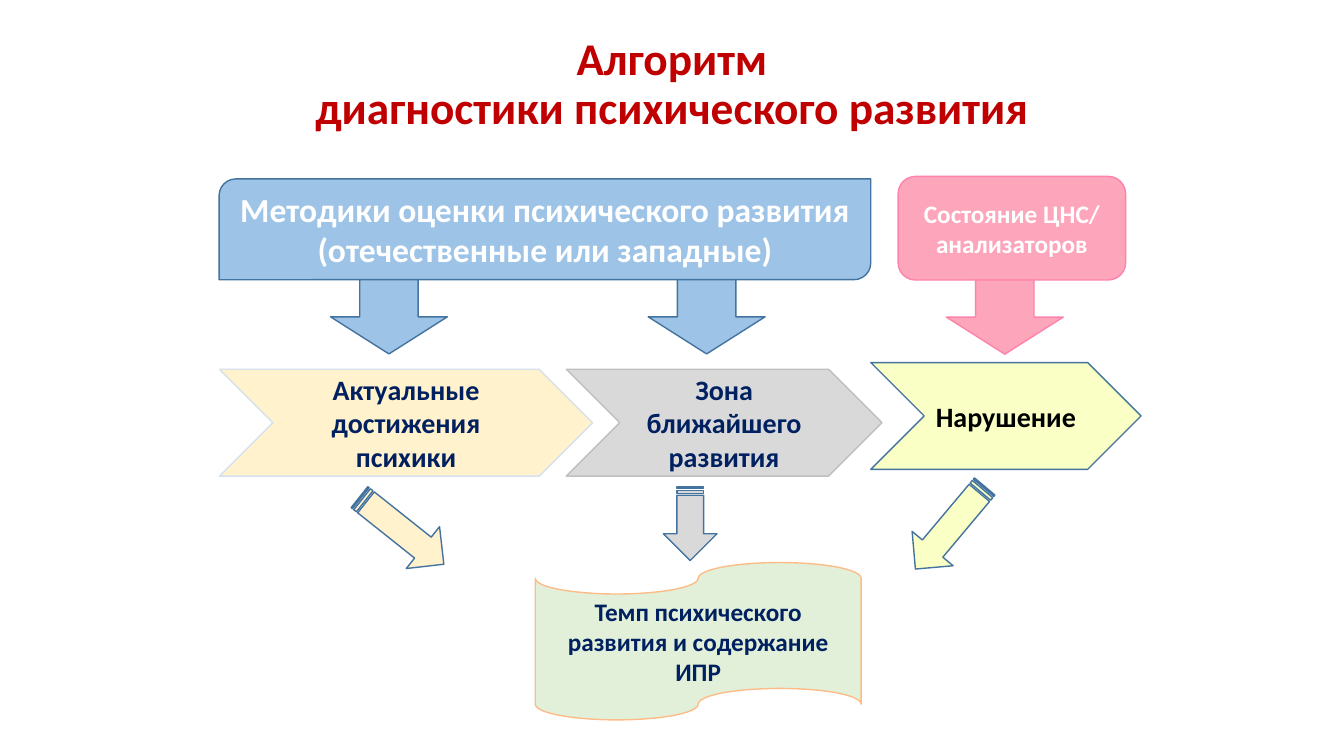
from pptx import Presentation
from pptx.util import Pt
from pptx.dml.color import RGBColor
from pptx.enum.shapes import MSO_SHAPE
from pptx.enum.text import MSO_ANCHOR, PP_ALIGN

RED = RGBColor(0xC0, 0x00, 0x00)
WHITE = RGBColor(0xFF, 0xFF, 0xFF)
BLACK = RGBColor(0x00, 0x00, 0x00)
NAVY = RGBColor(0x00, 0x20, 0x60)
BLUE = RGBColor(0x9D, 0xC3, 0xE6)
STEEL = RGBColor(0x43, 0x73, 0x9E)
CREAM = RGBColor(0xFF, 0xF2, 0xCC)
PALE = RGBColor(0xD6, 0xE1, 0xEE)
GRAY = RGBColor(0xD9, 0xD9, 0xD9)
SILVER = RGBColor(0xBF, 0xBF, 0xBF)
PINK = RGBColor(0xFD, 0xA5, 0xBA)
ROSE = RGBColor(0xFD, 0x83, 0xAC)
LEMON = RGBColor(0xF9, 0xFF, 0xC5)
GREEN = RGBColor(0xE2, 0xF0, 0xD9)
PEACH = RGBColor(0xFD, 0xBC, 0x87)


def write(shape, lines, size=20, color=NAVY, spacing=None):
    """Fill a shape with centred bold paragraphs."""
    frame = shape.text_frame
    frame.word_wrap = True
    frame.vertical_anchor = MSO_ANCHOR.MIDDLE
    for i, line in enumerate(lines):
        para = frame.paragraphs[0] if i == 0 else frame.add_paragraph()
        para.text = line
        para.alignment = PP_ALIGN.CENTER
        if spacing:
            para.line_spacing = spacing
        for run in para.runs:
            font = run.font
            font.name, font.size, font.bold = "Calibri", Pt(size), True
            font.color.rgb = color


def draw(slide, kind, box, fill, line, turn=0):
    """Add a flat filled shape with a thin outline."""
    shape = slide.shapes.add_shape(kind, *map(Pt, box))
    shape.shadow.inherit = False
    shape.fill.solid()
    shape.fill.fore_color.rgb = fill
    shape.line.color.rgb = line
    shape.line.width = Pt(1)
    shape.rotation = turn
    return shape


def add_title(slide, box):
    title = slide.shapes.title
    title.left, title.top, title.width, title.height = map(Pt, box)
    write(title, ["Алгоритм\vдиагностики психического развития"],
          size=32.4, color=RED, spacing=0.9)


def add_source(slide, box, kind, lines, size, fill, line, drops):
    """A heading block with down arrows hanging from its lower edge."""
    left, top, width, height = box
    write(draw(slide, kind, box, fill, line), lines, size=size, color=WHITE)
    for shift in drops:
        spot = (left + shift, top + height, 83.5, 53)
        draw(slide, MSO_SHAPE.DOWN_ARROW, spot, fill, line)


def add_stage(slide, box, label, fill, line, color, arrow):
    """A chevron and the striped arrow that leads on from it."""
    left, top, width, height = box
    write(draw(slide, MSO_SHAPE.CHEVRON, box, fill, line), [label], color=color)
    shift, drop, length, turn = arrow
    spot = (left + shift, top + drop, length, 38.2)
    draw(slide, MSO_SHAPE.STRIPED_RIGHT_ARROW, spot, fill, STEEL, turn)


def add_result(slide, box):
    tape = draw(slide, MSO_SHAPE.FLOWCHART_PUNCHED_TAPE, box, GREEN, PEACH)
    write(tape, ["Темп психического развития и содержание ИПР"], size=18)


def main():
    deck = Presentation()
    deck.slide_width, deck.slide_height = Pt(960), Pt(540)
    slide = deck.slides.add_slide(deck.slide_layouts[5])

    add_title(slide, (156, 21.6, 648, 78.5))

    # What the assessment draws on
    add_source(slide, (156.5, 127.8, 465.5, 72),
               MSO_SHAPE.ROUND_2_DIAG_RECTANGLE,
               ["Методики оценки психического развития",
                "(отечественные или западные)"],
               24, BLUE, STEEL, (79.6, 306.5))
    add_source(slide, (641.5, 126, 162.5, 74), MSO_SHAPE.ROUNDED_RECTANGLE,
               ["Состояние ЦНС/ анализаторов"], 18, PINK, ROSE, (34.5,))

    # Stages: arrow is shift, drop, length and turn
    add_stage(slide, (156.8, 263.8, 266.5, 76.3),
              "Актуальные достижения психики", CREAM, PALE, NAVY,
              (91.6, 96.2, 77, 38.5))
    add_stage(slide, (404.5, 263.8, 225.5, 76.3),
              "Зона ближайшего развития", GRAY, SILVER, NAVY,
              (62.2, 91.2, 52.6, 90))
    add_stage(slide, (622, 259, 193, 76.3), "Нарушение", LEMON, STEEL, BLACK,
              (18.1, 98.9, 77, 130))

    add_result(slide, (382.3, 401.8, 232.8, 112.4))
    deck.save("out.pptx")


if __name__ == "__main__":
    main()
